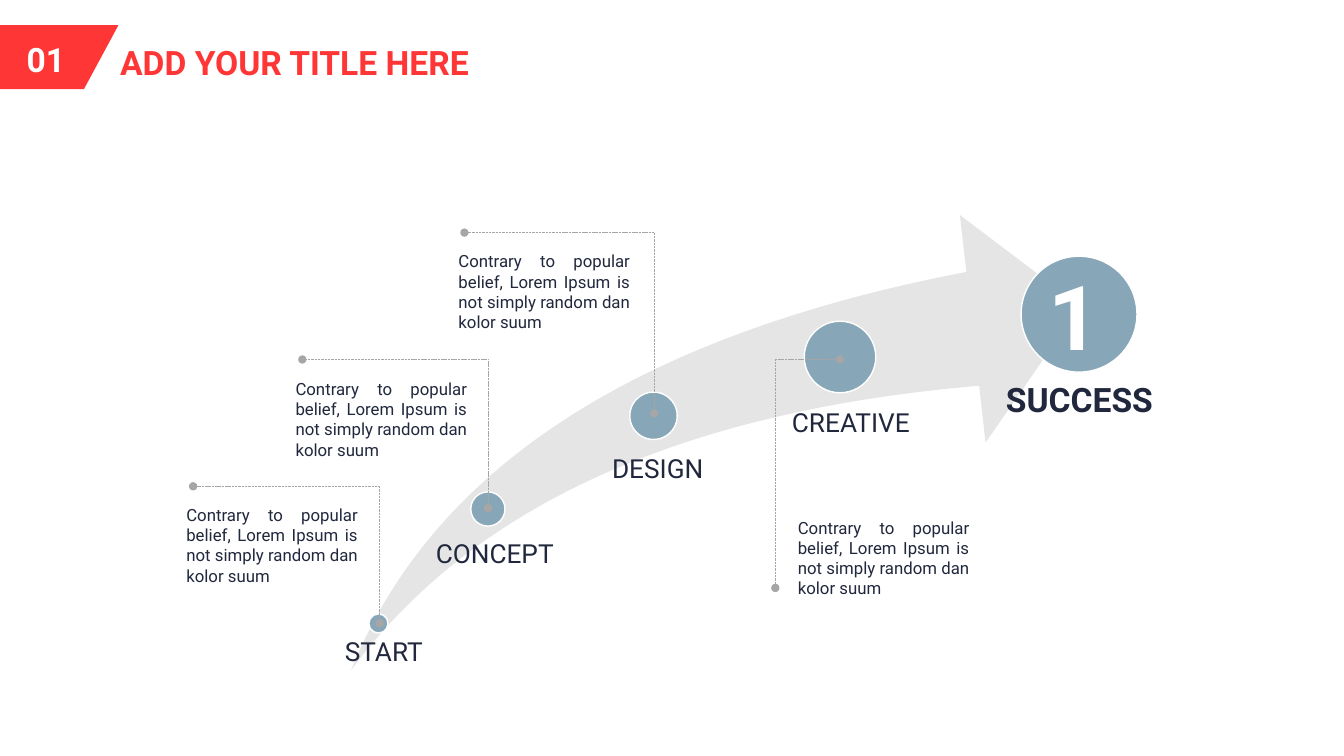
from lxml.etree import SubElement
from pptx import Presentation
from pptx.dml.color import RGBColor
from pptx.enum.dml import MSO_LINE
from pptx.enum.shapes import MSO_CONNECTOR, MSO_SHAPE
from pptx.enum.text import MSO_ANCHOR, PP_ALIGN
from pptx.oxml.ns import qn
from pptx.util import Inches, Pt

COLS, ROWS = 160, 90
FONT = "Roboto"
HUES = {
    "ink": "21283D",
    "red": "FF3636",
    "blue": "87A7B9",
    "gray": "808080",
    "rule": "A6A6A6",
    "white": "FFFFFF",
}
BODY = "Contrary to popular belief, Lorem Ipsum is not simply random dan kolor suum"


def hue(name):
    return RGBColor.from_string(HUES[name])


class Deck:
    def __init__(self):
        self.file = Presentation()
        self.file.slide_width = Inches(13.33)
        self.file.slide_height = Inches(7.5)
        self.slide = self.file.slides.add_slide(self.file.slide_layouts[5])
        self.shapes = self.slide.shapes

    def x(self, col):
        return round(self.file.slide_width * col / COLS)

    def y(self, row):
        return round(self.file.slide_height * row / ROWS)

    def box(self, left, top, wide, high):
        return self.x(left), self.y(top), self.x(wide), self.y(high)

    def paint(self, shape, fill, line=None):
        shape.shadow.inherit = False
        shape.fill.solid()
        shape.fill.fore_color.rgb = hue(fill)
        if line:
            shape.line.color.rgb = hue(line)
            shape.line.width = Pt(1)
        else:
            shape.line.fill.background()

    def label(self, shape, text, size, color="ink", bold=False,
              align=PP_ALIGN.LEFT, inset=True):
        frame = shape.text_frame
        frame.text = text
        frame.word_wrap = True
        frame.vertical_anchor = MSO_ANCHOR.TOP
        frame.margin_left = frame.margin_right = Inches(0.1 if inset else 0)
        frame.margin_top = frame.margin_bottom = Inches(0.05 if inset else 0)
        line = frame.paragraphs[0]
        line.alignment = align
        font = line.runs[0].font
        font.name, font.size, font.bold = FONT, Pt(size), bold
        font.color.rgb = hue(color)

    def title(self, text, area):
        head = self.shapes.title
        head.left, head.top, head.width, head.height = self.box(*area)
        self.label(head, text, 24, "red", True)

    def text(self, text, area, size, **look):
        self.label(self.shapes.add_textbox(*self.box(*area)), text, size, **look)

    def banner(self, points):
        spots = [(self.x(col), self.y(row)) for col, row in points]
        build = self.shapes.build_freeform(*spots[0])
        build.add_line_segments(spots[1:])
        self.paint(build.convert_to_shape(), "red")

    def arrow(self, area):
        shape = self.shapes.add_shape(MSO_SHAPE.SWOOSH_ARROW, *self.box(*area))
        shape.adjustments[0] = shape.adjustments[1] = 0.25
        self.paint(shape, "gray")
        color = shape._element.spPr.find(qn("a:solidFill"))[0]
        SubElement(color, qn("a:alpha"), val="20000")

    def step(self, name, mid, size, spot, points=18.7, bold=False):
        group = self.shapes.add_group_shape().shapes
        col, row = mid
        area = col - size / 2, row - size / 2, size, size
        self.paint(group.add_shape(MSO_SHAPE.OVAL, *self.box(*area)), "blue", "white")
        col, row = spot
        note = group.add_textbox(*self.box(col - 11, row, 22, 6))
        self.label(note, name, points, bold=bold, align=PP_ALIGN.CENTER, inset=False)

    def leader(self, start, end):
        link = self.shapes.add_connector(
            MSO_CONNECTOR.ELBOW, self.x(start[0]), self.y(start[1]),
            self.x(end[0]), self.y(end[1]))
        link.line.color.rgb = hue("rule")
        link.line.width = Pt(0.25)
        link.line.dash_style = MSO_LINE.SQUARE_DOT
        props = link._element.spPr
        bend = props.find(qn("a:prstGeom")).find(qn("a:avLst"))
        SubElement(bend, qn("a:gd"), name="adj1", fmla="val 0")
        for tip in ("a:headEnd", "a:tailEnd"):
            SubElement(props.find(qn("a:ln")), qn(tip), type="oval")
        SubElement(props, qn("a:effectLst"))


def main():
    deck = Deck()
    deck.arrow((41.8, 25.6, 86.8, 54.2))

    steps = [
        ("START", (45.06, 74.22), 2.28, (45.7, 75.6)),
        ("CONCEPT", (58.08, 60.6), 4.08, (58.9, 64)),
        ("DESIGN", (77.8, 49.5), 5.64, (78.3, 53.8)),
        ("CREATIVE", (100, 42.5), 8.52, (101.3, 48.4)),
    ]
    for step in steps:
        deck.step(*step)

    notes = [
        ((45.2, 74.2), (23, 57.9), (21, 59.5)),
        ((58.1, 60.5), (36, 42.8), (34, 44.5)),
        ((77.9, 49.2), (55.3, 27.7), (53.4, 29.3)),
        ((92.3, 70), (100, 42.8), (93.8, 61)),
    ]
    for start, end, corner in notes:
        deck.leader(start, end)
        deck.text(BODY, (*corner, 22.8, 10.9), 12, align=PP_ALIGN.JUSTIFY)

    deck.step("SUCCESS", (128.46, 37.4), 13.8, (128.5, 45.1), 24, True)
    deck.text("1", (123.7, 30.5, 7.6, 14.2), 64, color="white", bold=True)

    deck.banner([(0, 3), (14.1, 3), (10, 10.6), (0, 10.6)])
    deck.title("ADD YOUR TITLE HERE", (13.1, 4.4, 49.7, 6))
    deck.text("01", (2, 4, 7.6, 6), 24, color="white", bold=True)
    deck.file.save("out.pptx")


if __name__ == "__main__":
    main()
